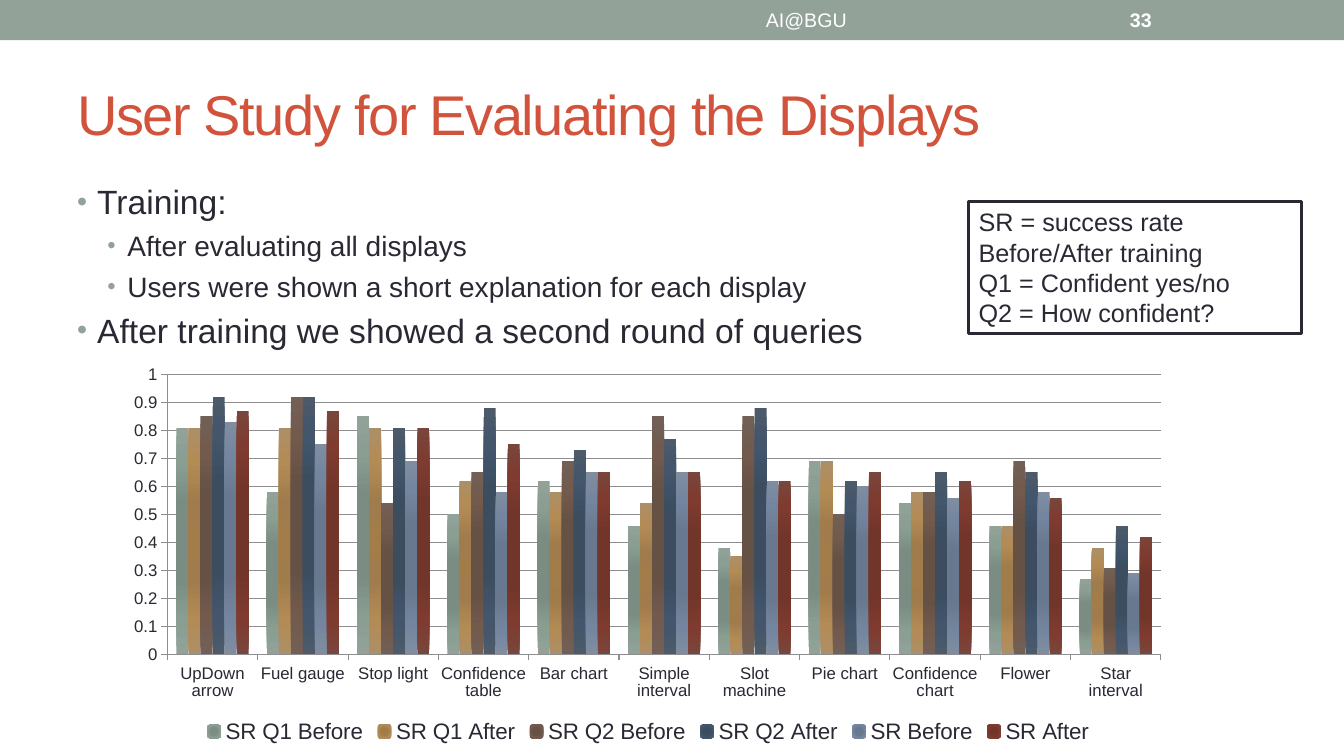
from dataclasses import dataclass

from lxml.etree import SubElement
from pptx import Presentation
from pptx.chart.data import CategoryChartData
from pptx.dml.color import RGBColor
from pptx.enum.chart import XL_CHART_TYPE as ChartType, XL_LEGEND_POSITION as LegendSpot
from pptx.enum.chart import XL_TICK_MARK as TickMark
from pptx.enum.shapes import MSO_SHAPE as Preset
from pptx.enum.text import MSO_ANCHOR as Anchor, PP_ALIGN as Align
from pptx.oxml import parse_xml
from pptx.oxml.ns import nsdecls, qn
from pptx.util import Pt

FONT = "Arial"
COLORS = {"sage": "93A299", "title": "D2533C", "ink": "292934", "white": "FFFFFF", "axis": "8E8E90"}
DISPLAYS = ["UpDown arrow", "Fuel gauge", "Stop light", "Confidence table", "Bar chart",
            "Simple interval", "Slot machine", "Pie chart", "Confidence chart", "Flower",
            "Star interval"]
GRADIENT_STOPS = (0, 34, 70, 100)


@dataclass
class Line:
    text: str
    size: float
    color: str = "ink"
    bold: bool = False
    align: Align = Align.LEFT
    indent: float = 0
    space: float = 0


@dataclass
class TextBlock:
    left: float
    top: float
    width: float
    height: float
    lines: list[Line]
    anchor: Anchor = Anchor.TOP


@dataclass
class Rate:
    name: str
    shades: tuple[str, ...]
    values: tuple[float, ...]


RATES = [
    Rate("SR Q1 Before", ("7B8E82", "7B8D83", "8A9E92", "93A299"),
         (0.81, 0.58, 0.85, 0.5, 0.62, 0.46, 0.38, 0.69, 0.54, 0.46, 0.27)),
    Rate("SR Q1 After", ("A37D49", "A07C4C", "B38B55", "AD8F67"),
         (0.81, 0.81, 0.81, 0.62, 0.58, 0.54, 0.35, 0.69, 0.58, 0.46, 0.38)),
    Rate("SR Q2 Before", ("685044", "665145", "725A4D", "726056"),
         (0.85, 0.92, 0.54, 0.65, 0.69, 0.85, 0.85, 0.5, 0.58, 0.69, 0.31)),
    Rate("SR Q2 After", ("3B4D61", "3C4D60", "43566B", "4C5A6A"),
         (0.92, 0.92, 0.81, 0.88, 0.73, 0.77, 0.88, 0.62, 0.65, 0.65, 0.46)),
    Rate("SR Before", ("677790", "68788E", "74869F", "808DA0"),
         (0.83, 0.75, 0.69, 0.58, 0.65, 0.65, 0.62, 0.6, 0.56, 0.58, 0.29)),
    Rate("SR After", ("743327", "72352A", "7F3B2F", "79463D"),
         (0.87, 0.87, 0.81, 0.75, 0.65, 0.65, 0.62, 0.65, 0.62, 0.56, 0.42)),
]
BULLETS = TextBlock(48, 126, 864, 384, [
    Line("Training:", 24, indent=14.4),
    Line("After evaluating all displays", 20, indent=36, space=5),
    Line("Users were shown a short explanation for each display", 20, indent=36, space=5),
    Line("After training we showed a second round of queries", 24, indent=14.4, space=5),
])
KEY = TextBlock(692, 144, 237.6, 94.3, [
    Line("SR = success rate", 18),
    Line("Before/After training", 18),
    Line("Q1 = Confident yes/no", 18),
    Line("Q2 = How confident?", 18),
])
HEADER = [
    TextBlock(360, 1.4, 432, 26, [Line("AI@BGU", 14, "white", align=Align.CENTER)], Anchor.MIDDLE),
    TextBlock(800, 1.4, 112, 26, [Line("33", 14, "white", bold=True)], Anchor.MIDDLE),
]


def rgb(name: str) -> RGBColor:
    """Return a named colour."""
    return RGBColor.from_string(COLORS[name])


def style_font(font, size: float, color: str, bold: bool = False) -> None:
    """Apply the slide typeface with a size and a colour."""
    font.name, font.size, font.bold = FONT, Pt(size), bold
    font.color.rgb = rgb(color)


def add_bullet(para, indent: float) -> None:
    """Give a paragraph a hanging sage bullet."""
    props = para._p.get_or_add_pPr()
    props.set("marL", str(Pt(indent)))
    props.set("indent", str(-Pt(14.4)))
    SubElement(SubElement(props, qn("a:buClr")), qn("a:srgbClr"), val=COLORS["sage"])
    SubElement(props, qn("a:buSzPct"), val="85000")
    SubElement(props, qn("a:buFont"), typeface=FONT)
    SubElement(props, qn("a:buChar"), char="•")


def write_block(shape, block: TextBlock) -> None:
    """Fill a shape with the lines of a text block."""
    frame = shape.text_frame
    frame.word_wrap = True
    frame.vertical_anchor = block.anchor
    for index, line in enumerate(block.lines):
        para = frame.add_paragraph() if index else frame.paragraphs[0]
        para.text, para.alignment, para.space_before = line.text, line.align, Pt(line.space)
        if line.indent:
            add_bullet(para, line.indent)
        style_font(para.font, line.size, line.color, line.bold)


def add_text(page, block: TextBlock) -> None:
    """Add a text box for a block."""
    box = page.shapes.add_textbox(Pt(block.left), Pt(block.top), Pt(block.width), Pt(block.height))
    write_block(box, block)


def add_panel(page, left: float, top: float, width: float, height: float, fill: str):
    """Add a flat rectangle without outline."""
    panel = page.shapes.add_shape(Preset.RECTANGLE, Pt(left), Pt(top), Pt(width), Pt(height))
    panel.shadow.inherit = False
    panel.fill.solid()
    panel.fill.fore_color.rgb = rgb(fill)
    panel.line.fill.background()
    return panel


def add_title(page, text: str) -> None:
    """Place and format the title placeholder."""
    title = page.shapes.title
    title.left, title.top, title.width, title.height = Pt(48), Pt(42), Pt(864), Pt(78)
    write_block(title, TextBlock(48, 42, 864, 78, [Line(text, 40, "title")], Anchor.MIDDLE))
    title.text_frame.paragraphs[0].runs[0]._r.get_or_add_rPr().set("spc", "-100")


def shade_series(series, shades: tuple[str, ...]) -> None:
    """Fill the bars of a series with a radial gradient."""
    series.format.fill.gradient()
    old = series._element.spPr.find(qn("a:gradFill"))
    stops = "".join(f'<a:gs pos="{stop * 1000}"><a:srgbClr val="{shade}"/></a:gs>'
                    for stop, shade in zip(GRADIENT_STOPS, shades))
    old.getparent().replace(old, parse_xml(
        f'<a:gradFill {nsdecls("a")} rotWithShape="1"><a:gsLst>{stops}</a:gsLst>'
        '<a:path path="circle"><a:fillToRect l="100000" t="100000" r="100000" b="100000"/>'
        '</a:path></a:gradFill>'))


def fix_plot_area(chart, **fractions: float) -> None:
    """Set the inner plot area as fractions of the chart."""
    area = chart._chartSpace.chart.plotArea
    for old in area.findall(qn("c:layout")):
        area.remove(old)
    sizes = "".join(f'<c:{key} val="{value}"/>' for key, value in fractions.items())
    area.insert(0, parse_xml(
        f'<c:layout {nsdecls("c")}><c:manualLayout><c:layoutTarget val="inner"/>'
        f'<c:xMode val="edge"/><c:yMode val="edge"/>{sizes}</c:manualLayout></c:layout>'))


def add_rates_chart(page) -> None:
    """Add the clustered columns of success rates."""
    data = CategoryChartData()
    data.categories = DISPLAYS
    for rate in RATES:
        data.add_series(rate.name, rate.values)
    chart = page.shapes.add_chart(ChartType.COLUMN_CLUSTERED, Pt(81.4), Pt(256.3), Pt(763.2),
                                  Pt(278), data).chart
    style_font(chart.font, 12, "ink")
    chart.has_title = False
    chart.has_legend = True
    chart.legend.position, chart.legend.include_in_layout = LegendSpot.BOTTOM, False
    style_font(chart.legend.font, 16, "ink")
    plot = chart.plots[0]
    plot.gap_width, plot.overlap, plot.vary_by_categories = 150, 0, False
    for series, rate in zip(plot.series, RATES):
        shade_series(series, rate.shades)
    scale = chart.value_axis
    scale.minimum_scale, scale.maximum_scale, scale.major_unit = 0, 1, 0.1
    scale.has_major_gridlines = True
    for axis in (chart.category_axis, scale):
        axis.major_tick_mark, axis.minor_tick_mark = TickMark.OUTSIDE, TickMark.NONE
        style_font(axis.tick_labels.font, 12, "ink")
    for stroke in (chart.category_axis.format.line, scale.format.line,
                   scale.major_gridlines.format.line):
        stroke.width = Pt(0.75)
        stroke.color.rgb = rgb("axis")
    fix_plot_area(chart, x=0.05, y=0.04, w=0.93, h=0.72)


def main() -> None:
    """Build the slide and save it."""
    deck = Presentation()
    deck.slide_width, deck.slide_height = Pt(960), Pt(540)
    page = deck.slides.add_slide(deck.slide_layouts[5])
    add_panel(page, 0, 0, 960, 28.8, "sage")
    add_title(page, "User Study for Evaluating the Displays")
    add_text(page, BULLETS)
    add_rates_chart(page)
    key = add_panel(page, KEY.left, KEY.top, KEY.width, KEY.height, "white")
    key.line.width = Pt(2.08)
    key.line.color.rgb = rgb("ink")
    write_block(key, KEY)
    for block in HEADER:
        add_text(page, block)
    deck.save("out.pptx")


if __name__ == "__main__":
    main()
